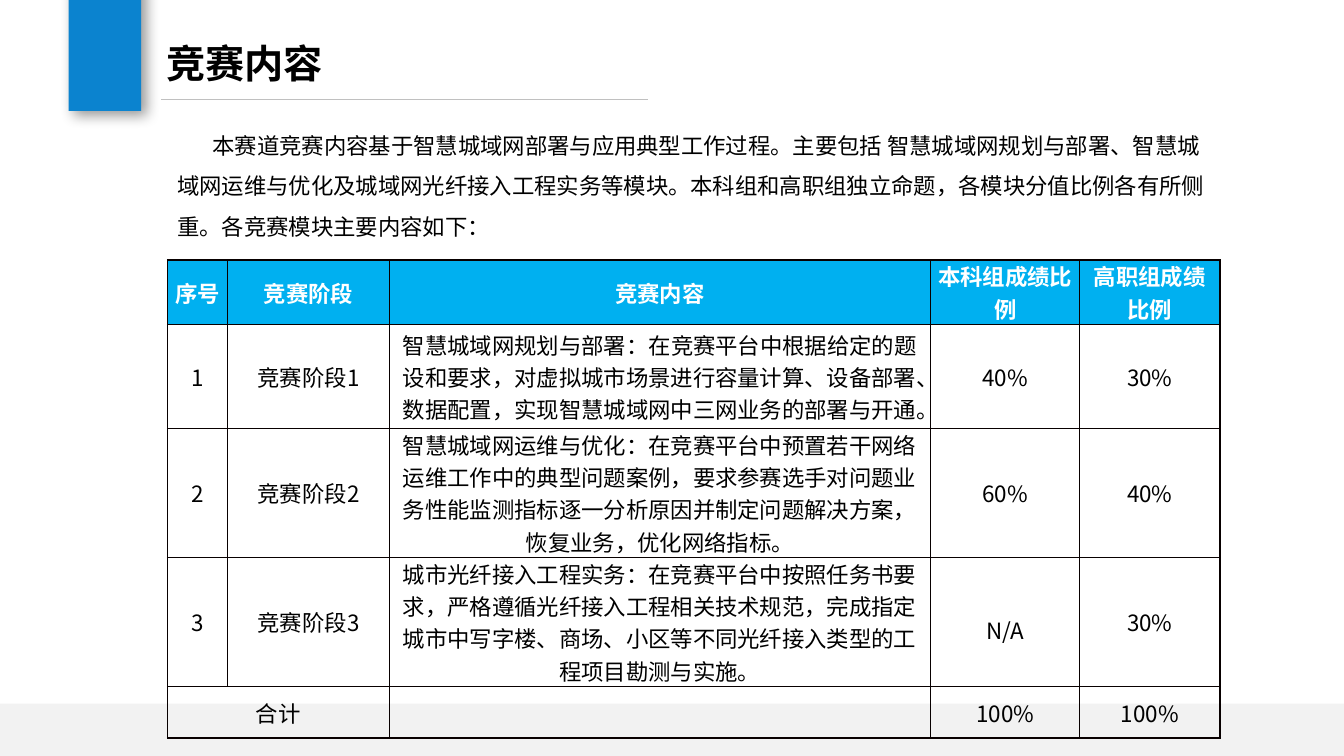
from dataclasses import dataclass

from lxml import etree
from pptx import Presentation
from pptx.dml.color import RGBColor
from pptx.enum.shapes import MSO_CONNECTOR, MSO_SHAPE
from pptx.enum.text import MSO_ANCHOR, MSO_AUTO_SIZE, PP_ALIGN
from pptx.oxml.ns import nsdecls, qn
from pptx.oxml import parse_xml
from pptx.util import Inches, Pt

RECTANGLE = MSO_SHAPE.RECTANGLE
STRAIGHT = MSO_CONNECTOR.STRAIGHT
MIDDLE = MSO_ANCHOR.MIDDLE
LEFT, CENTER = PP_ALIGN.LEFT, PP_ALIGN.CENTER


@dataclass(frozen=True)
class Theme:
    font: str = "Noto Sans CJK SC"
    latin: str = "Times New Roman"
    text: str = "000000"
    header_text: str = "FFFFFF"
    header_fill: str = "00B0F0"
    accent: str = "0B83CF"
    band: str = "F2F2F2"
    rule: str = "C0C0C0"
    border: str = "080000"
    title_size: int = 28
    body_size: int = 16


THEME = Theme()


def write(frame, *runs, size=THEME.body_size, color=THEME.text, bold=False,
          align=LEFT, spacing=None, before=None):
    """Fill the first paragraph with (text, font) runs and return it."""
    paragraph = frame.paragraphs[0]
    paragraph.alignment = align
    paragraph.line_spacing = spacing
    paragraph.space_before = before
    for text, font in runs:
        run = paragraph.add_run()
        run.text = text
        run.font.size = Pt(size)
        run.font.bold = bold
        run.font.color.rgb = RGBColor.from_string(color)
        run.font.name = font
        etree.SubElement(run.font._element, qn("a:ea"), typeface=THEME.font)
    return paragraph


prs = Presentation()
prs.slide_width, prs.slide_height = Inches(13.33), Inches(7.5)
slide = prs.slides.add_slide(prs.slide_layouts[5])
shapes = slide.shapes

# Blue tab, footer band and title rule
for left, top, width, height, color in (
    (0.68, -0.19, 0.72, 1.29, THEME.accent),
    (0, 6.98, 13.33, 0.52, THEME.band),
):
    block = shapes.add_shape(RECTANGLE, Inches(left), Inches(top), Inches(width), Inches(height))
    block.shadow.inherit = False
    block.fill.solid()
    block.fill.fore_color.rgb = RGBColor.from_string(color)
    block.line.fill.background()
    if color == THEME.accent:
        effects = block._element.spPr.find(qn("a:effectLst"))
        effects.append(parse_xml(
            f'<a:outerShdw {nsdecls("a")} blurRad="{Pt(10)}" dist="{Pt(5)}" dir="2700000" '
            'algn="tl" rotWithShape="0"><a:srgbClr val="000000"><a:alpha val="40000"/>'
            '</a:srgbClr></a:outerShdw>'))

title_rule = shapes.add_connector(STRAIGHT, Inches(1.6), Inches(0.99), Inches(6.43), Inches(0.99))
title_rule.line.color.rgb = RGBColor.from_string(THEME.rule)
title_rule.line.width = Pt(0.5)
etree.SubElement(title_rule._element.spPr, qn("a:effectLst"))

# Title
title = shapes.title
title.left, title.top, title.width, title.height = map(Inches, (1.55, 0.36, 8.47, 0.59))
title.text_frame.auto_size = MSO_AUTO_SIZE.NONE
title.text_frame.vertical_anchor = MIDDLE
write(title.text_frame, ("竞赛内容", THEME.font), size=THEME.title_size, bold=True, spacing=0.9)

# Contest table: one list of runs per cell
HEADERS = ["序号", "竞赛阶段", "竞赛内容", "本科组成绩比例", "高职组成绩比例"]
STAGES = [
    ([("智慧城域网规划与部署", THEME.latin), ("：", THEME.font),
      ("在竞赛平台中根据给定的题设和要求，对虚拟城市场景进行容量计算、设备部署、"
       "数据配置，实现智慧城域网中三网业务的部署与开通。", THEME.latin)], "40%", "30%"),
    ([("智慧城域网运维与优化：在竞赛平台中预置若干网络运维工作中的典型问题案例，"
       "要求参赛选手对问题业务性能监测指标逐一分析原因并制定问题解决方案，"
       "恢复业务，优化网络指标。", THEME.font)], "60%", "40%"),
    ([("城市光纤接入工程实务：在竞赛平台中按照任务书要求，严格遵循光纤接入工程相关"
       "技术规范，完成指定城市中写字楼、商场、小区等不同光纤接入类型的工程项目勘测与实施。",
       THEME.font)], "N/A", "30%"),
]
rows = [HEADERS]
for number, (content, undergraduate, vocational) in enumerate(STAGES, 1):
    rows.append([str(number), f"竞赛阶段{number}", content, undergraduate, vocational])
rows.append(["合计", "", "", "100%", "100%"])

COLUMN_WIDTHS = [0.6, 1.6, 5.37, 1.48, 1.39]
ROW_HEIGHTS = [0.52, 1.03, 1.03, 1.03, 0.51]
contest = shapes.add_table(len(rows), len(HEADERS), Inches(1.66), Inches(2.58),
                           Inches(10.45), Inches(4.2)).table
contest.first_row = contest.horz_banding = False
for column, width in zip(contest.columns, COLUMN_WIDTHS):
    column.width = Inches(width)
for row, height in zip(contest.rows, ROW_HEIGHTS):
    row.height = Inches(height)

for r, values in enumerate(rows):
    for c, value in enumerate(values):
        cell = contest.cell(r, c)
        cell.margin_left = cell.margin_right = Inches(0.07)
        cell.margin_top = cell.margin_bottom = 0
        cell.vertical_anchor = MIDDLE
        for side in ("lnL", "lnR", "lnT", "lnB"):
            cell._tc.tcPr.append(parse_xml(
                f'<a:{side} {nsdecls("a")} w="{Pt(1)}"><a:solidFill>'
                f'<a:srgbClr val="{THEME.border}"/></a:solidFill></a:{side}>'))
        is_header = r == 0
        if is_header:
            cell.fill.solid()
            cell.fill.fore_color.rgb = RGBColor.from_string(THEME.header_fill)
        else:
            cell.fill.background()
        if value:
            runs = [(value, THEME.font)] if isinstance(value, str) else value
            absent = value == "N/A"
            write(cell.text_frame, *runs, bold=is_header, align=CENTER,
                  color=THEME.header_text if is_header else THEME.text,
                  spacing=1.5 if absent else None, before=Pt(3.8) if absent else None)
contest.cell(len(rows) - 1, 0).merge(contest.cell(len(rows) - 1, 1))

# Introduction with a first-line indent
intro = shapes.add_textbox(Inches(1.66), Inches(1.13), Inches(10.45), Inches(1.27)).text_frame
intro.word_wrap = True
intro.auto_size = MSO_AUTO_SIZE.SHAPE_TO_FIT_TEXT
opening = write(intro, (
    "本赛道竞赛内容基于智慧城域网部署与应用典型工作过程。主要包括 智慧城域网规划与部署、"
    "智慧城域网运维与优化及城域网光纤接入工程实务等模块。本科组和高职组独立命题，"
    "各模块分值比例各有所侧重。各竞赛模块主要内容如下：", THEME.font), spacing=1.5)
opening._p.get_or_add_pPr().set("indent", str(Inches(0.35)))

prs.save("out.pptx")
